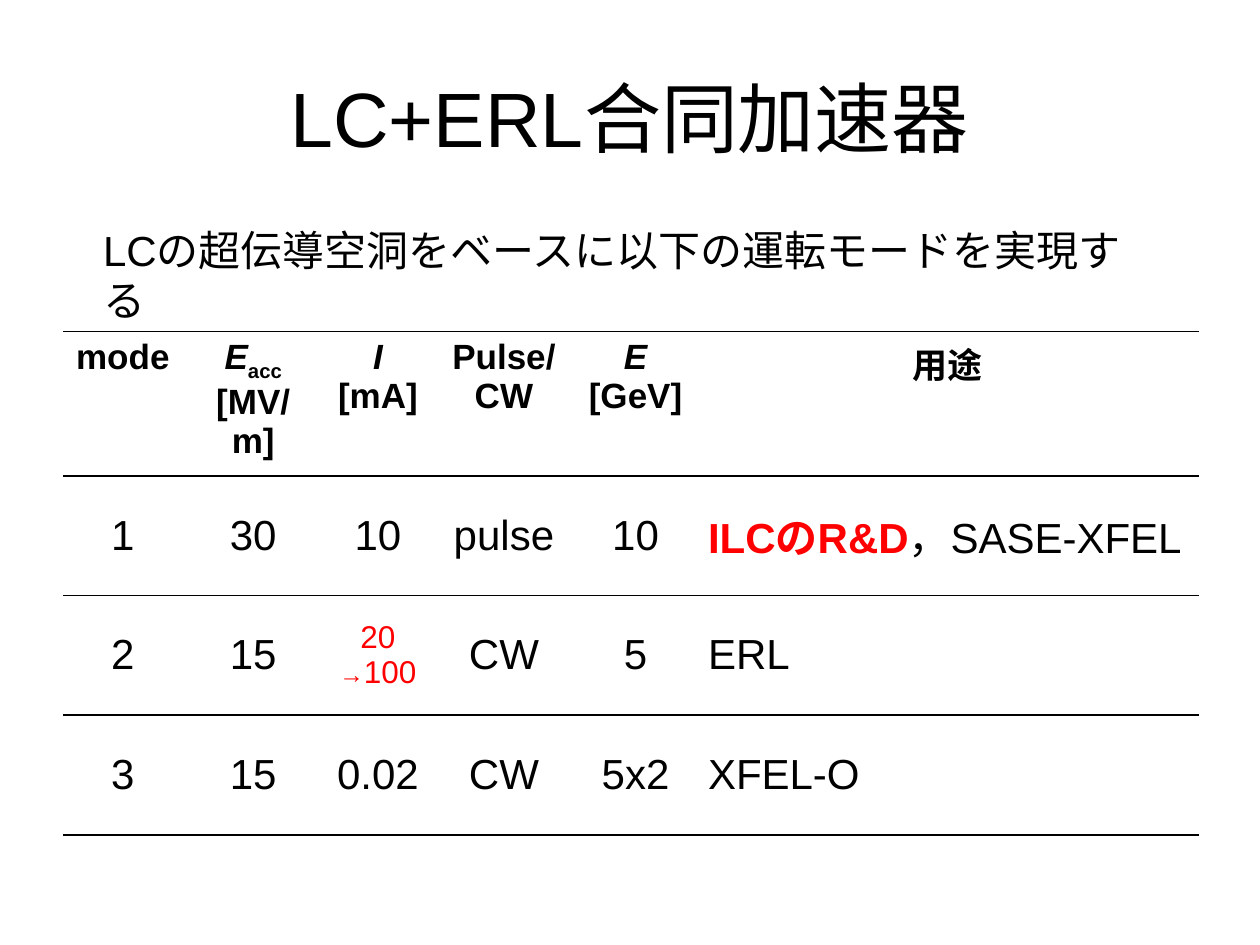
from pptx import Presentation
from pptx.dml.color import RGBColor
from pptx.enum.text import MSO_ANCHOR, MSO_AUTO_SIZE, PP_ALIGN
from pptx.oxml import parse_xml
from pptx.oxml.ns import nsdecls
from pptx.util import Inches, Pt

COLORS = {"text": "000000", "alert": "FF0000", "rule": "000000"}
WIDTHS = [0.95, 1.12, 0.86, 1.14, 0.95, 4]
ROW_H = 0.95

RED = {"size": 18, "color": "alert"}
ITALIC = {"italic": True}

# A cell is plain text or a list of paragraphs, each a list of (text, style) runs.
HEAD = [
    "mode",
    [[("E", ITALIC), ("acc", {"base": -25})], [("[MV/m]", {})]],
    [[("I", ITALIC)], [("[mA]", {})]],
    "Pulse/CW",
    [[("E", ITALIC)], [("[GeV]", {})]],
    "用途",
]
MODES = [
    ["1", "30", "10", "pulse", "10",
     [[("ILCのR&D", {"color": "alert", "bold": True}), ("，SASE-XFEL", {})]]],
    ["2", "15",
     [[("20", RED)], [("→", {**RED, "size": 14}), ("100", RED)]],
     "CW", "5", "ERL"],
    ["3", "15", "0.02", "CW", "5x2", "XFEL-O"],
]


def style_run(run, size, color="text", bold=False, italic=False, base=0, face="Arial"):
    font = run.font
    font.name = face
    font.size = Pt(size)
    font.bold = bold
    font.italic = italic
    font.color.rgb = RGBColor.from_string(COLORS[color])
    if base:
        run._r.get_or_add_rPr().set("baseline", str(base * 1000))


def fill_text(frame, paras, align, **base):
    """Write paragraphs of styled runs; base holds the shared style."""
    for i, runs in enumerate(paras):
        para = frame.paragraphs[0] if i == 0 else frame.add_paragraph()
        para.alignment = align
        for text, style in runs:
            run = para.add_run()
            run.text = text
            style_run(run, **{**base, **style})


def add_text(slide, box, runs, size, align, anchor):
    frame = slide.shapes.add_textbox(*map(Inches, box)).text_frame
    frame.word_wrap = True
    frame.vertical_anchor = anchor
    fill_text(frame, [runs], align, size=size)
    return frame


def rule_cell(cell):
    """Draw lines above and below the cell only, with no fill."""
    props = cell._tc.get_or_add_tcPr()
    line = f'<a:solidFill><a:srgbClr val="{COLORS["rule"]}"/></a:solidFill>'
    for side in "LRTB":
        paint = line if side in "TB" else "<a:noFill/>"
        props.append(parse_xml(
            f'<a:ln{side} {nsdecls("a")} w="{Pt(1)}">{paint}</a:ln{side}>'))
    cell.fill.background()


def add_modes(slide):
    rows = [HEAD] + MODES
    shape = slide.shapes.add_table(
        len(rows), len(WIDTHS), Inches(0.5), Inches(2.63),
        Inches(sum(WIDTHS)), Inches(ROW_H * len(rows)))
    table = shape.table
    table.first_row = table.horz_banding = False
    for col, width in zip(table.columns, WIDTHS):
        col.width = Inches(width)
    for r, row in enumerate(rows):
        table.rows[r].height = Inches(ROW_H)
        head = r == 0
        for c, item in enumerate(row):
            cell = table.cell(r, c)
            rule_cell(cell)
            cell.vertical_anchor = MSO_ANCHOR.TOP if head else MSO_ANCHOR.MIDDLE
            left = not head and c == len(row) - 1
            paras = [[(item, {})]] if isinstance(item, str) else item
            fill_text(cell.text_frame, paras,
                      PP_ALIGN.LEFT if left else PP_ALIGN.CENTER,
                      size=20 if head else 24, bold=head)


def main():
    deck = Presentation()
    deck.slide_width, deck.slide_height = Inches(10), Inches(7.5)
    slide = deck.slides.add_slide(deck.slide_layouts[6])
    add_text(slide, (0.5, 0.3, 9, 1.25), [("LC+ERL合同加速器", {})],
             44, PP_ALIGN.CENTER, MSO_ANCHOR.MIDDLE)
    add_modes(slide)
    lead = [("LC", {}),
            ("の超伝導空洞をベースに以下の運転モードを実現する", {"face": "Calibri"})]
    frame = add_text(slide, (0.72, 1.73, 8.32, 0.5), lead,
                     24, PP_ALIGN.LEFT, MSO_ANCHOR.TOP)
    frame.auto_size = MSO_AUTO_SIZE.SHAPE_TO_FIT_TEXT
    deck.save("out.pptx")


if __name__ == "__main__":
    main()
